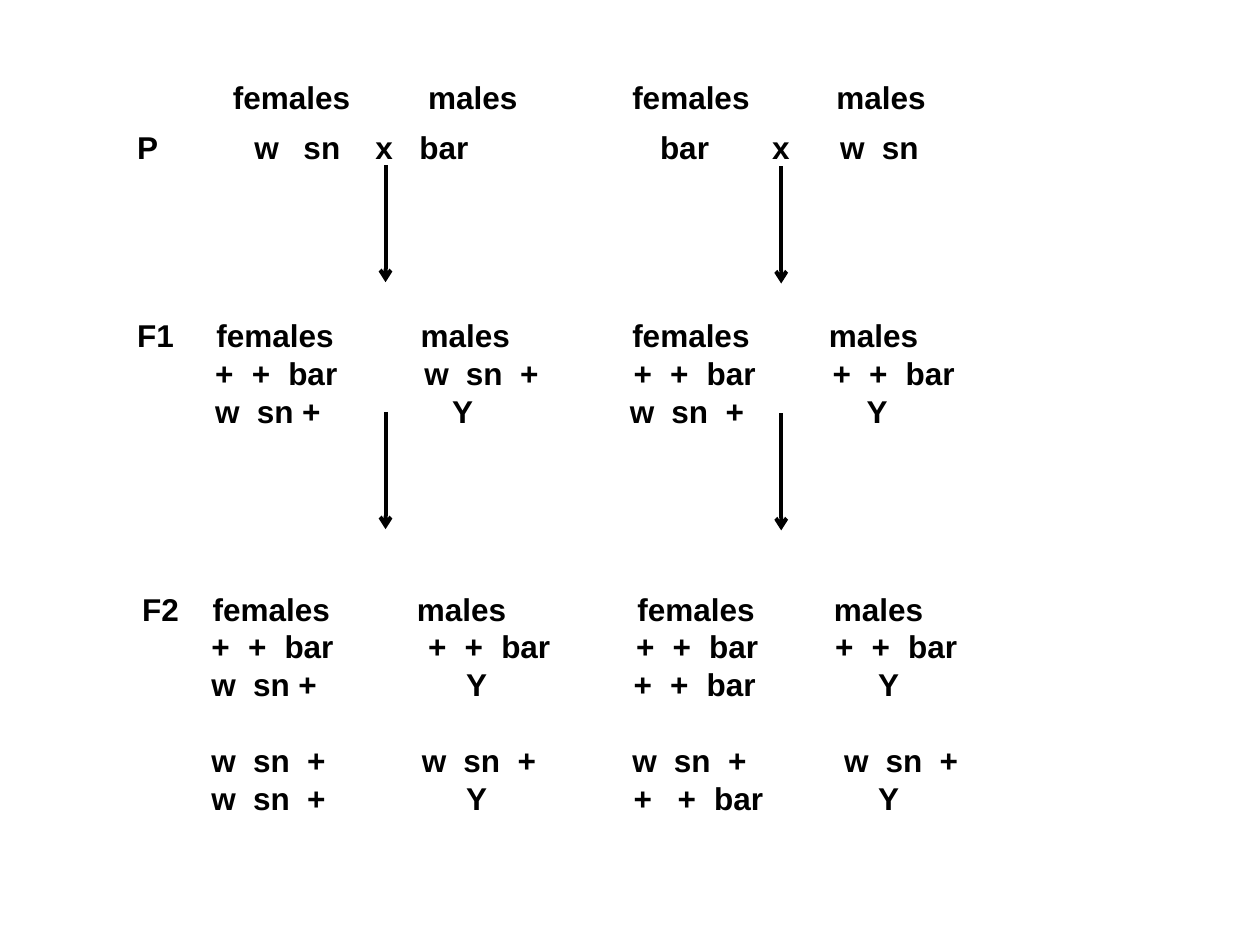
from lxml import etree
from pptx import Presentation
from pptx import util as u
from pptx.dml.color import RGBColor
from pptx.enum import shapes, text
from pptx.oxml.ns import qn

BLACK = "000000"
PAD = 0.1
GAP = 0.14
WIDE = {"+": 0.15, "w": 0.19, "sn": 0.29}

SEX = ("females", "males", "females", "males")
HEAD = [[*zip((1.85, 3.4, 5.02, 6.64), SEX)]]
CROSS = [[(1.09, "P"), (2.02, "w"), (2.41, "sn"), (2.98, "x"), (3.33, "bar"),
          (5.24, "bar"), (6.13, "x"), (6.67, "w sn")]]
FIRST = [
    [(1.09, "F1"), *zip((1.72, 3.34, 5.02, 6.58), SEX)],
    [(1.71, "+ + bar"), (3.37, "w sn +"), (5.03, "+ + bar"), (6.61, "+ + bar")],
    [(1.71, "w sn"), (2.4, "+"), (3.59, "Y"), (5, "w sn +"), (6.88, "Y")],
]
SECOND = [
    [(1.13, "F2"), *zip((1.69, 3.31, 5.06, 6.62), SEX)],
    [(1.68, "+ + bar"), (3.4, "+ + bar"), (5.05, "+ + bar"), (6.63, "+ + bar")],
    [(1.68, "w sn"), (2.37, "+"), (3.7, "Y"), (5.03, "+ + bar"), (6.97, "Y")],
    [(1.68, "w sn +"), (3.35, "w sn +"), (5.02, "w sn +"), (6.7, "w sn +")],
    [(1.68, "w sn +"), (3.7, "Y"), (5.03, "+"), (5.38, "+ bar"), (6.97, "Y")],
]


def color(code):
    """Turn a hex string into a colour."""
    return RGBColor.from_string(code)


def spread(row):
    """Split each genotype into single alleles with their own positions."""
    out = []
    for x, words in row:
        for word in words.split():
            out.append((x, word))
            x += WIDE.get(word, 0) + GAP
    return out


def add_row(para, row, left):
    """Write one row, each word at its own tab stop."""
    stops = etree.SubElement(para._p.get_or_add_pPr(), qn("a:tabLst"))
    for x, word in spread(row):
        inset = x - left
        if inset > 0.01:
            etree.SubElement(stops, qn("a:tab"),
                             pos=str(int(u.Inches(inset))), algn="l")
            word = "\t" + word
        run = para.add_run()
        run.text = word
        run.font.name = "Arial"
        run.font.size = u.Pt(18)
        run.font.bold = True
        run.font.color.rgb = color(BLACK)


def add_rows(slide, x, y, w, h, rows, split=None):
    """Add a text box of rows, with a line's gap before row number split."""
    box = slide.shapes.add_textbox(*map(u.Inches, (x, y, w, h)))
    frame = box.text_frame
    frame.word_wrap = True
    frame.auto_size = text.MSO_AUTO_SIZE.SHAPE_TO_FIT_TEXT
    for i, row in enumerate(rows):
        para = frame.add_paragraph() if i else frame.paragraphs[0]
        if i == split:
            para.space_before = u.Pt(21.6)
        add_row(para, row, x + PAD)


def add_arrow(slide, x, y, size=0.93):
    """Add an arrow pointing down to the next generation."""
    line = slide.shapes.add_connector(
        shapes.MSO_CONNECTOR.STRAIGHT, *map(u.Inches, (x, y, x, y + size)))
    line.line.color.rgb = color(BLACK)
    line.line.width = u.Pt(2.25)
    etree.SubElement(line.line._get_or_add_ln(), qn("a:tailEnd"), type="arrow")
    etree.SubElement(line._element.spPr, qn("a:effectLst"))


def main():
    """Build the slide of reciprocal crosses."""
    deck = Presentation()
    deck.slide_width, deck.slide_height = u.Inches(10), u.Inches(7.5)
    slide = deck.slides.add_slide(deck.slide_layouts[6])
    add_rows(slide, 0.99, 0.97, 6.51, 0.4, CROSS)
    add_rows(slide, 0.99, 2.46, 6.97, 1.01, FIRST)
    add_rows(slide, 1.75, 0.57, 5.76, 0.4, HEAD)
    add_rows(slide, 1.03, 4.63, 6.75, 1.92, SECOND, split=3)
    for y in (1.31, 3.27):
        add_arrow(slide, 3.06, y)
        add_arrow(slide, 6.2, y + 0.01)
    deck.save("out.pptx")


if __name__ == "__main__":
    main()
